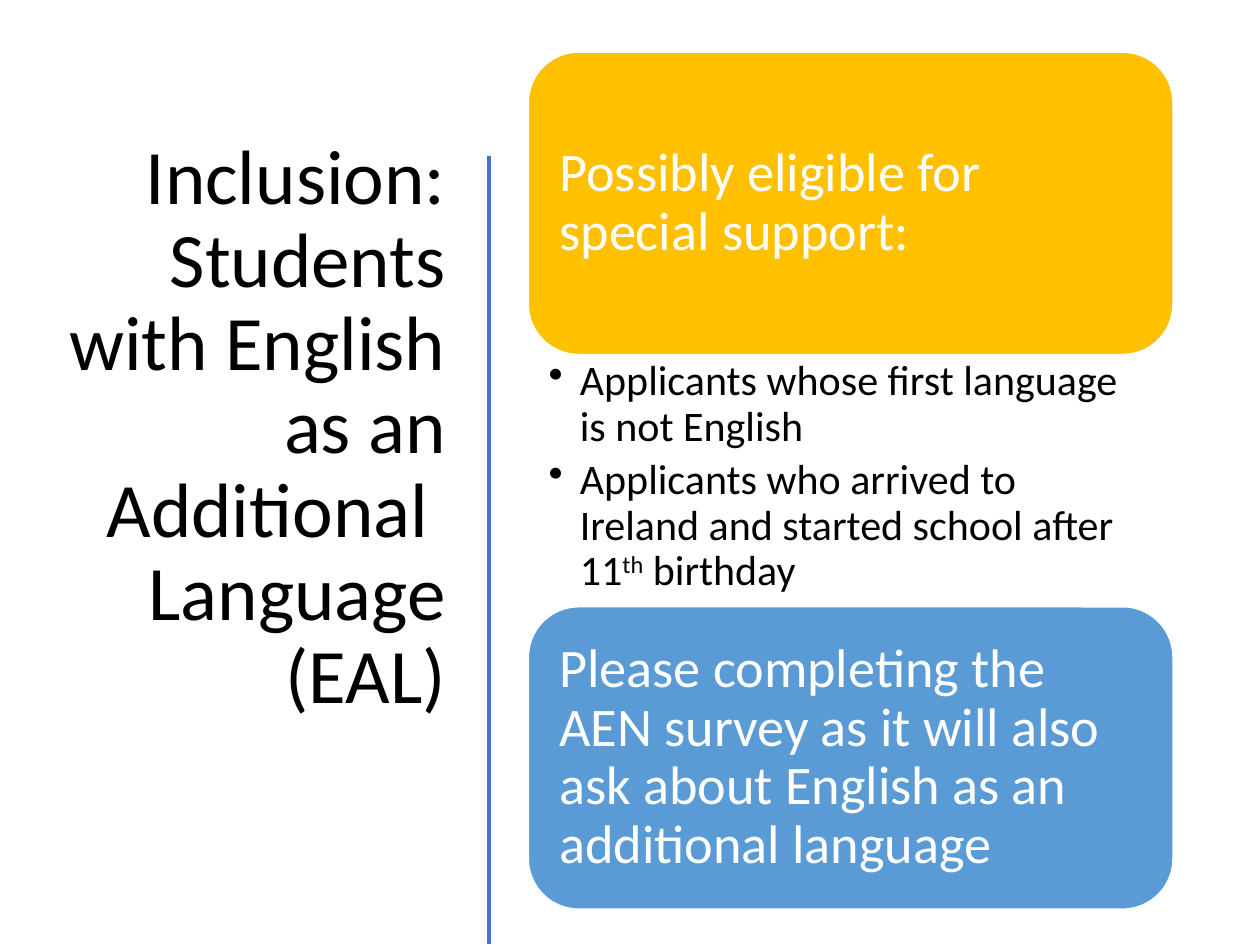
from dataclasses import dataclass

from lxml import etree
from pptx import Presentation
from pptx import util as u
from pptx.dml.color import RGBColor
from pptx.enum import shapes, text
from pptx.oxml import ns

FONT = "Calibri"
BLACK, WHITE = "000000", "FFFFFF"
PANEL_LEFT, PANEL_WIDTH, PANEL_HEIGHT = 10.65, 13.0, 6.1
PANEL_INSET = 0.33
BULLET_INDENT = u.Cm(0.63)


@dataclass
class Panel:
    top: float
    fill: str
    message: str


@dataclass
class Piece:
    words: str
    superscript: bool = False


PANELS = [
    Panel(1.05, "FFC000", "Possibly eligible for special support:"),
    Panel(12.23, "5B9BD5", "Please completing the AEN survey as it will also "
                           "ask about English as an additional language"),
]
CRITERIA = [
    [Piece("Applicants whose first language is not English")],
    [Piece("Applicants who arrived to Ireland and started school after 11"),
     Piece("th", superscript=True), Piece(" birthday")],
]


def rgb(value: str) -> RGBColor:
    return RGBColor.from_string(value)


def style(paragraph, size: float, color: str, align=text.PP_ALIGN.LEFT) -> None:
    paragraph.alignment = align
    paragraph.line_spacing = 0.9
    paragraph.font.name = FONT
    paragraph.font.size = u.Pt(size)
    paragraph.font.color.rgb = rgb(color)


def set_frame(frame, anchor, left: float, top: float, right: float, bottom: float) -> None:
    """Wrap the text, anchor it and set its insets in centimetres."""
    frame.word_wrap = True
    frame.vertical_anchor = anchor
    frame.margin_left, frame.margin_top = u.Cm(left), u.Cm(top)
    frame.margin_right, frame.margin_bottom = u.Cm(right), u.Cm(bottom)


def add_title(slide, words: str) -> None:
    box = slide.shapes.add_textbox(u.Cm(1.04), u.Cm(0.89), u.Cm(8.2), u.Cm(15.52))
    set_frame(box.text_frame, text.MSO_ANCHOR.MIDDLE, 0.25, 0.13, 0.25, 0.13)
    paragraph = box.text_frame.paragraphs[0]
    paragraph.text = words
    style(paragraph, 44, BLACK, text.PP_ALIGN.RIGHT)


def add_divider(slide) -> None:
    x = u.Cm(9.86)
    line = slide.shapes.add_connector(
        shapes.MSO_CONNECTOR.STRAIGHT, x, u.Cm(3.15), x, u.Cm(19.02))
    line.line.color.rgb = rgb("4472C4")
    line.line.width = u.Pt(2)
    etree.SubElement(line._element.spPr, ns.qn("a:effectLst"))


def add_panel(slide, panel: Panel) -> None:
    shape = slide.shapes.add_shape(
        shapes.MSO_SHAPE.ROUNDED_RECTANGLE, u.Cm(PANEL_LEFT), u.Cm(panel.top),
        u.Cm(PANEL_WIDTH), u.Cm(PANEL_HEIGHT))
    shape.shadow.inherit = False
    shape.fill.solid()
    shape.fill.fore_color.rgb = rgb(panel.fill)
    shape.line.color.rgb = rgb(WHITE)
    shape.line.width = u.Pt(1)
    set_frame(shape.text_frame, text.MSO_ANCHOR.MIDDLE, *[PANEL_INSET] * 4)
    paragraph = shape.text_frame.paragraphs[0]
    paragraph.text = panel.message
    style(paragraph, 31, WHITE)


def add_bullet(paragraph) -> None:
    properties = paragraph._p.get_or_add_pPr()
    properties.set("marL", str(BULLET_INDENT))
    properties.set("indent", str(-BULLET_INDENT))
    etree.SubElement(properties, ns.qn("a:buChar")).set("char", "•")


def add_criteria(slide, criteria: list[list[Piece]]) -> None:
    top = PANELS[0].top + PANEL_HEIGHT
    box = slide.shapes.add_textbox(
        u.Cm(PANEL_LEFT), u.Cm(top), u.Cm(PANEL_WIDTH), u.Cm(PANELS[1].top - top))
    frame = box.text_frame
    set_frame(frame, text.MSO_ANCHOR.TOP, 0.41, 0.1, 0.61, 0.1)
    for index, pieces in enumerate(criteria):
        paragraph = frame.add_paragraph() if index else frame.paragraphs[0]
        add_bullet(paragraph)
        style(paragraph, 24, BLACK)
        paragraph.space_after = u.Pt(4.8)
        for piece in pieces:
            run = paragraph.add_run()
            run.text = piece.words
            if piece.superscript:
                run.font._element.set("baseline", "30000")


def main() -> None:
    deck = Presentation()
    deck.slide_width, deck.slide_height = u.Cm(25.4), u.Cm(19.05)
    slide = deck.slides.add_slide(deck.slide_layouts[6])
    add_title(slide, "Inclusion: Students with English as an Additional  Language (EAL)")
    add_divider(slide)
    for panel in PANELS:
        add_panel(slide, panel)
    add_criteria(slide, CRITERIA)
    deck.save("out.pptx")


if __name__ == "__main__":
    main()
